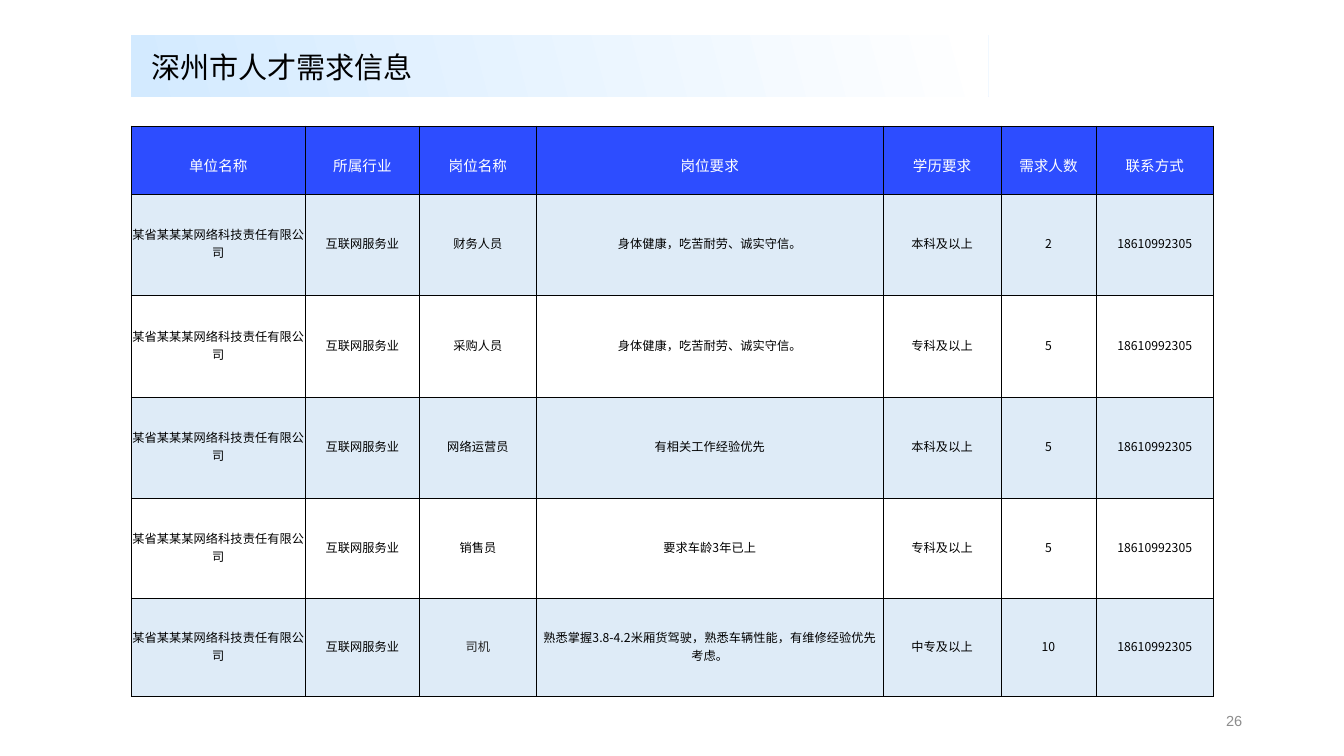
from lxml.etree import SubElement
from pptx import Presentation
from pptx.dml.color import RGBColor
from pptx.enum.shapes import MSO_SHAPE
from pptx.enum.text import MSO_ANCHOR, PP_ALIGN
from pptx.oxml import parse_xml
from pptx.oxml.ns import nsdecls, qn
from pptx.util import Inches, Pt

CJK_FONT = "Noto Sans CJK SC"
COMPANY = "某省某某某网络科技责任有限公司"
INDUSTRY = "互联网服务业"
PHONE = "18610992305"
HEADERS = ["单位名称", "所属行业", "岗位名称", "岗位要求", "学历要求", "需求人数", "联系方式"]
JOBS = [
    ("财务人员", "身体健康，吃苦耐劳、诚实守信。", "本科及以上", "2"),
    ("采购人员", "身体健康，吃苦耐劳、诚实守信。", "专科及以上", "5"),
    ("网络运营员", "有相关工作经验优先", "本科及以上", "5"),
    ("销售员", "要求车龄3年已上", "专科及以上", "5"),
    ("司机", "熟悉掌握3.8-4.2米厢货驾驶，熟悉车辆性能，有维修经验优先考虑。", "中专及以上", "10"),
]
COLUMN_WIDTHS = [1.73, 1.13, 1.16, 3.44, 1.17, 0.94, 1.17]
ROW_HEIGHTS = [0.68, 1, 1.01, 1, 1, 0.97]


def color(value):
    return RGBColor.from_string(value)


def style(paragraph, size, font_color, name=CJK_FONT):
    font = paragraph.font
    font.size = Pt(size)
    font.color.rgb = color(font_color)
    font.name = name
    # East Asian characters need their own typeface entry
    SubElement(font._rPr, qn("a:ea"), typeface=name)


presentation = Presentation()
presentation.slide_width = Inches(13.33)
presentation.slide_height = Inches(7.5)
slide = presentation.slides.add_slide(presentation.slide_layouts[6])

# Title band
band = slide.shapes.add_shape(MSO_SHAPE.RECTANGLE, Inches(1.3), Inches(0.35), Inches(8.5), Inches(0.61))
band.shadow.inherit = False
band.line.fill.background()
band.fill.gradient()
band.fill.gradient_angle = 15
for stop, (position, stop_color) in zip(band.fill.gradient_stops, [(0, "D3EAFF"), (1, "FFFFFF")]):
    stop.position = position
    stop.color.rgb = color(stop_color)

# Title
title = slide.shapes.add_textbox(Inches(1.4), Inches(0.44), Inches(2.8), Inches(0.45))
title.text_frame.word_wrap = False
title.text_frame.text = "深州市人才需求信息"
style(title.text_frame.paragraphs[0], 20.8, "000000")

# Table grid
rows = [HEADERS] + [(COMPANY, INDUSTRY, *job, PHONE) for job in JOBS]
table = slide.shapes.add_table(
    len(rows), len(HEADERS), Inches(1.3), Inches(1.25),
    Inches(sum(COLUMN_WIDTHS)), Inches(sum(ROW_HEIGHTS))).table
for column, width in zip(table.columns, COLUMN_WIDTHS):
    column.width = Inches(width)
for row, height in zip(table.rows, ROW_HEIGHTS):
    row.height = Inches(height)

# Table cells
for row_index, texts in enumerate(rows):
    is_header = row_index == 0
    fill_color = "2D4DFF" if is_header else "DEEBF7" if row_index % 2 else "FFFFFF"
    for column_index, text in enumerate(texts):
        cell = table.cell(row_index, column_index)
        cell.text = text
        cell.vertical_anchor = MSO_ANCHOR.MIDDLE
        inset = Inches(0.03 if is_header else 0.01)
        cell.margin_left = cell.margin_top = cell.margin_right = inset
        cell.margin_bottom = Inches(0.03 if is_header else 0.04)
        paragraph = cell.text_frame.paragraphs[0]
        paragraph.alignment = PP_ALIGN.CENTER
        if is_header:
            paragraph.line_spacing = 1.5
            style(paragraph, 10.4, "FFFFFF")
        else:
            style(paragraph, 8.7, "202020" if text == "司机" else "000000")

        # Borders come before the fill in the cell properties
        properties = cell._tc.get_or_add_tcPr()
        for side in ("lnL", "lnR", "lnT", "lnB"):
            properties.append(parse_xml(
                f'<a:{side} {nsdecls("a")} w="6350"><a:solidFill>'
                f'<a:srgbClr val="000000"/></a:solidFill></a:{side}>'))
        cell.fill.solid()
        cell.fill.fore_color.rgb = color(fill_color)

# Page number
number = slide.shapes.add_textbox(Inches(9.42), Inches(6.95), Inches(3), Inches(0.4))
number.text_frame.word_wrap = True
number.text_frame.vertical_anchor = MSO_ANCHOR.MIDDLE
number.text_frame.text = "26"
number.text_frame.paragraphs[0].alignment = PP_ALIGN.RIGHT
style(number.text_frame.paragraphs[0], 10.4, "8C8C8C", "Arial")

presentation.save("out.pptx")
